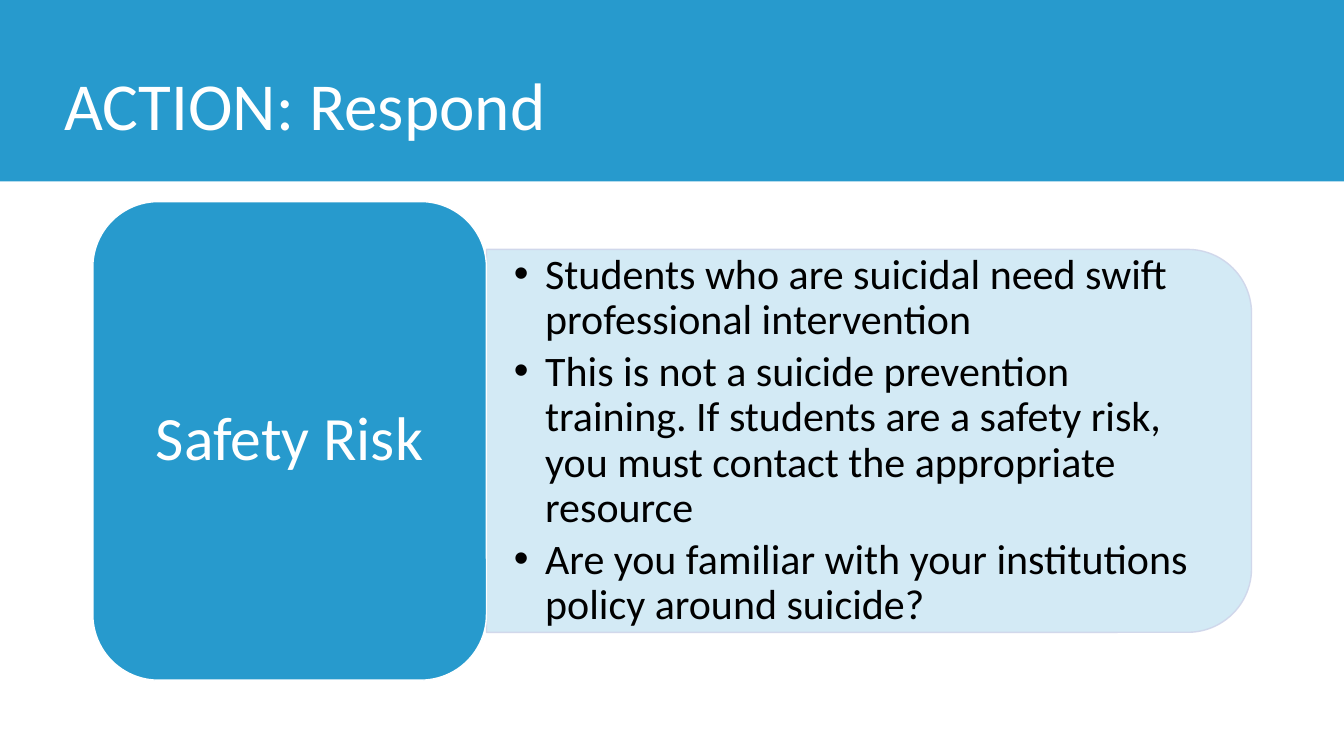
from dataclasses import dataclass
from lxml.etree import SubElement
from pptx import Presentation
from pptx.dml.color import RGBColor
from pptx.enum.shapes import MSO_SHAPE
from pptx.enum.text import MSO_ANCHOR, PP_ALIGN
from pptx.oxml.ns import qn
from pptx.util import Cm, Pt


@dataclass(frozen=True)
class Theme:
    """Hold the colours, font and type sizes."""
    blue: str = "279ACD"
    edge: str = "CFD5EA"
    white: str = "FFFFFF"
    black: str = "000000"
    font: str = "Calibri"
    title: int = 48
    label: int = 44
    body: int = 30


THEME = Theme()
POINTS = [
    "Students who are suicidal need swift professional intervention",
    "This is not a suicide prevention training. If students are a safety risk, "
    "you must contact the appropriate resource",
    "Are you familiar with your institutions policy around suicide?",
]


def fade(paint, share):
    """Set the opacity of a solid fill, in percent."""
    tint = paint._xPr.find(qn("a:solidFill"))[0]
    SubElement(tint, qn("a:alpha"), val=str(share * 1000))


def add_form(slide, kind, box, fill, line=None):
    """Add a filled shape in the given box."""
    form = slide.shapes.add_shape(kind, *map(Cm, box))
    form.shadow.inherit = False
    form.fill.solid()
    form.fill.fore_color.rgb = RGBColor.from_string(fill)
    if line:
        form.line.color.rgb = RGBColor.from_string(line)
        form.line.width = Pt(1)
    else:
        form.line.fill.background()
    return form


def add_text(slide, lines, box, size, color, align=PP_ALIGN.LEFT,
             inset=(0.25, 0.13), bullet=False, after=0):
    """Add a text box with one paragraph for each line."""
    frame = slide.shapes.add_textbox(*map(Cm, box)).text_frame
    frame.word_wrap = True
    frame.vertical_anchor = MSO_ANCHOR.MIDDLE
    frame.margin_left = frame.margin_right = Cm(inset[0])
    frame.margin_top = frame.margin_bottom = Cm(inset[1])
    for count, line in enumerate(lines):
        para = frame.paragraphs[0] if count == 0 else frame.add_paragraph()
        para.alignment = align
        para.line_spacing = 0.9
        para.space_after = Pt(after)
        if bullet:
            props = para._p.get_or_add_pPr()
            props.set("marL", str(Cm(0.79)))
            props.set("indent", str(Cm(-0.79)))
            SubElement(props, qn("a:buFont"), typeface="Arial")
            SubElement(props, qn("a:buChar"), char="•")
        run = para.add_run()
        run.text = line
        run.font.name = THEME.font
        run.font.size = Pt(size)
        run.font.color.rgb = RGBColor.from_string(color)


def add_head(slide, box, title):
    """Draw the title band."""
    left, top, width, height = box
    add_form(slide, MSO_SHAPE.RECTANGLE, box, THEME.blue)
    add_text(slide, [title], (left + 1.37, top + 0.97, width - 3.9, height - 1.01),
             THEME.title, THEME.white)


def add_card(slide, box, points):
    """Draw the pale card, rounded on its right, with its bullet points."""
    left, top, width, height = box
    shift = (width - height) / 2
    card = add_form(slide, MSO_SHAPE.ROUND_2_SAME_RECTANGLE,
                    (left + shift, top - shift, height, width), THEME.blue, THEME.edge)
    card.rotation = 90
    fade(card.fill, 20)
    fade(card.line.fill, 90)
    add_text(slide, points, (left, top + 0.47, width - 0.47, height - 0.94),
             THEME.body, THEME.black, inset=(0.69, 0.36), bullet=True, after=4.5)


def add_tile(slide, box, label):
    """Draw the round tile with its label."""
    left, top, width, height = box
    add_form(slide, MSO_SHAPE.ROUNDED_RECTANGLE, box, THEME.blue, THEME.white)
    add_text(slide, [label], (left + 0.49, top + 0.49, width - 0.98, height - 0.98),
             THEME.label, THEME.white, align=PP_ALIGN.CENTER, inset=(0.46, 0.23))


def add_topic(slide, box, label, points):
    """Place the card beside the tile, centred on its height."""
    left, top, width, height = box
    split, depth = 9.92, 9.65
    add_card(slide, (left + split, top + (height - depth) / 2, width - split, depth), points)
    add_tile(slide, (left, top, split, height), label)


def main():
    """Build and save the slide."""
    deck = Presentation()
    deck.slide_width, deck.slide_height = Cm(33.87), Cm(19.05)
    slide = deck.slides.add_slide(deck.slide_layouts[6])
    add_head(slide, (0, 0, 33.87, 4.57), "ACTION: Respond")
    add_topic(slide, (2.34, 5.08, 29.2, 12.06), "Safety Risk", POINTS)
    deck.save("out.pptx")


if __name__ == "__main__":
    main()
